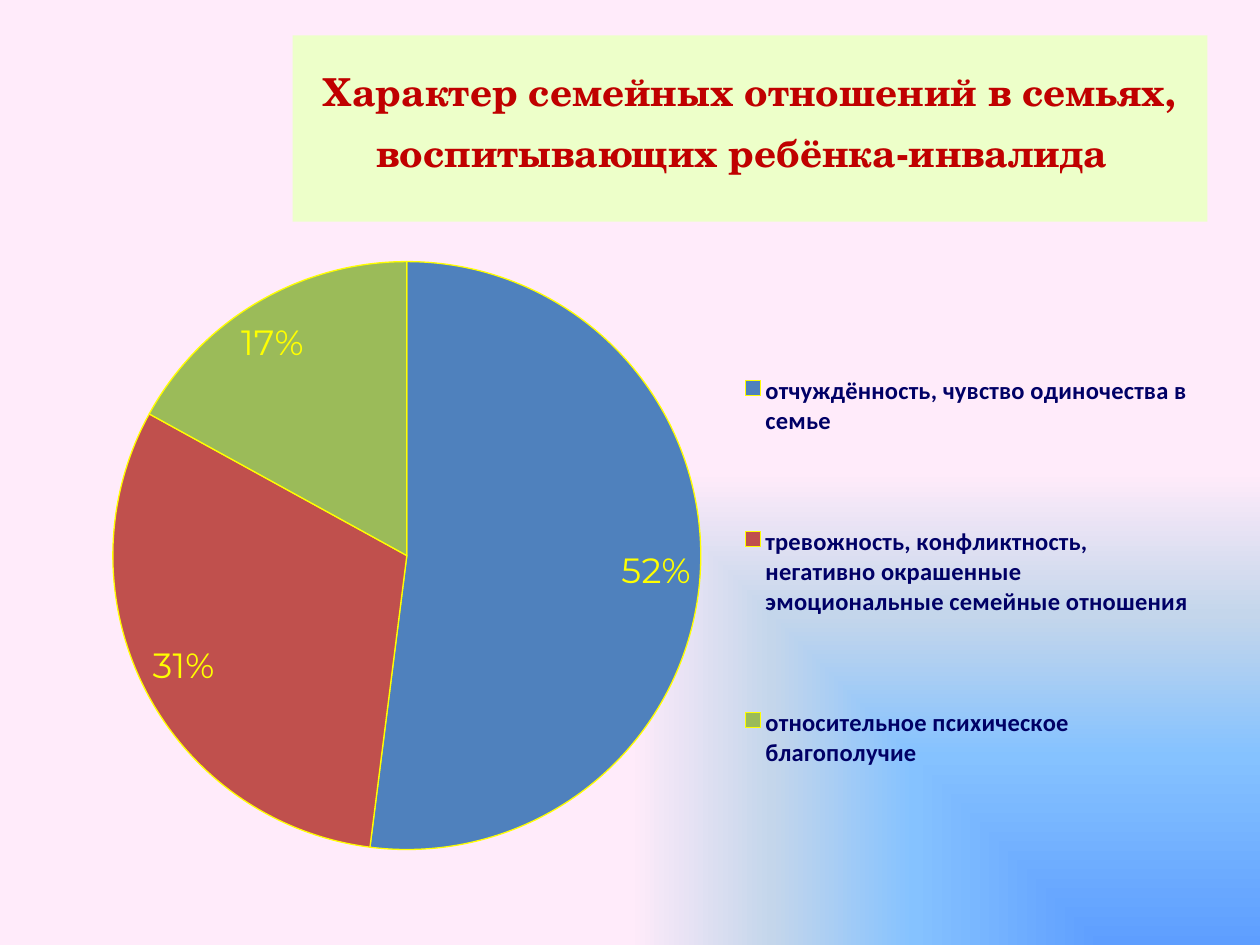
from lxml import etree
from pptx import Presentation
from pptx.chart.data import CategoryChartData
from pptx.dml.color import RGBColor
from pptx.enum import chart as ch, text
from pptx.oxml import parse_xml
from pptx.oxml.ns import nsdecls, qn
from pptx.util import Pt

HUES = {"panel": "EDFFC9", "title": "C00000", "black": "000000",
        "legend": "000066", "line": "FFFF00"}
GLOW = {0: "5E9EFF", 40: "85C2FF", 70: "C4D6EB", 100: "FFEBFA"}
PARTS = [
    ("отчуждённость, чувство одиночества в семье", 0.52, "4F81BD"),
    ("тревожность, конфликтность, негативно окрашенные "
     "эмоциональные семейные отношения", 0.31, "C0504D"),
    ("относительное психическое благополучие", 0.17, "9BBB59"),
]


def style(font, name, size, hue, bold=False):
    font.name, font.size, font.bold = name, Pt(size), bold
    font.color.rgb = RGBColor.from_string(hue)


def paint(fill, hue):
    fill.solid()
    fill.fore_color.rgb = RGBColor.from_string(hue)


def place(shape, box):
    shape.left, shape.top, shape.width, shape.height = map(Pt, box)


def glow(slide):
    """Fill the background with a gradient from the lower right corner."""
    fill = slide.background.fill
    fill.solid()
    stops = "".join(
        f'<a:gs pos="{pos * 1000}"><a:srgbClr val="{hue}"/></a:gs>'
        for pos, hue in GLOW.items())
    grad = parse_xml(
        f'<a:gradFill {nsdecls("a")} rotWithShape="1"><a:gsLst>{stops}</a:gsLst>'
        '<a:path path="rect"><a:fillToRect l="100000" t="100000"/></a:path>'
        '<a:tileRect r="-100000" b="-100000"/></a:gradFill>')
    solid = slide.background._cSld.find(".//" + qn("a:solidFill"))
    solid.getparent().replace(solid, grad)


def heading(slide, box):
    title = slide.shapes.title
    place(title, box)
    paint(title.fill, HUES["panel"])
    frame = title.text_frame
    frame.word_wrap = True
    frame.auto_size = text.MSO_AUTO_SIZE.NONE
    frame.vertical_anchor = text.MSO_ANCHOR.MIDDLE
    para = frame.paragraphs[0]
    para.alignment = text.PP_ALIGN.CENTER
    para.line_spacing = 0.8
    para.text = "Характер семейных отношений в семьях, воспитывающих ребёнка-инвалида"
    style(para.runs[0].font, "TeX Gyre Schola", 22, HUES["title"], True)
    tail = para.add_run()
    tail.text = " "
    style(tail.font, "Calibri", 40, HUES["black"])


def layout(part, spot, box, after=None, inner=False):
    """Pin a chart part to a spot, in points from the corner of the chart box."""
    for old in part.findall(qn("c:layout")):
        part.remove(old)
    node = etree.Element(qn("c:layout"))
    pin = etree.SubElement(node, qn("c:manualLayout"))
    if inner:
        etree.SubElement(pin, qn("c:layoutTarget"), val="inner")
    for key in "xy":
        etree.SubElement(pin, qn(f"c:{key}Mode"), val="edge")
    for key, val, full in zip("xywh", spot, box[2:] * 2):
        etree.SubElement(pin, qn(f"c:{key}"), val=str(val / full))
    if after:
        part.find(qn(after)).addnext(node)
    else:
        part.insert(0, node)


def pie(slide, box):
    names, vals, hues = zip(*PARTS)
    data = CategoryChartData(number_format="0%")
    data.categories = names
    data.add_series("Series 1", vals)
    chart = slide.shapes.add_chart(
        ch.XL_CHART_TYPE.PIE, *map(Pt, box), data).chart
    chart.has_title = False
    style(chart.font, "Calibri", 10, HUES["black"])

    plot = chart.plots[0]
    plot.vary_by_categories = True
    for idx, hue in enumerate(hues):
        form = plot.series[0].points[idx].format
        paint(form.fill, hue)
        form.line.width = Pt(0.75)
        form.line.color.rgb = RGBColor.from_string(HUES["line"])

    plot.has_data_labels = True
    labels = plot.data_labels
    labels.show_value = True
    labels.show_percentage = False
    labels.number_format = "0%"
    labels.number_format_is_linked = False
    labels.position = ch.XL_LABEL_POSITION.BEST_FIT
    style(labels.font, "Montserrat", 20, HUES["line"])

    chart.has_legend = True
    legend = chart.legend
    legend.position = ch.XL_LEGEND_POSITION.RIGHT
    legend.include_in_layout = False
    style(legend.font, "Calibri", 14, HUES["legend"], True)

    area = plot._element.getparent()
    layout(area, (22, 10, 336, 336), box, inner=True)
    layout(legend._element, (380.5, 23.5, 259, 328), box, "c:legendPos")


def main():
    deck = Presentation()
    deck.slide_width, deck.slide_height = Pt(720), Pt(540)
    slide = deck.slides.add_slide(deck.slide_layouts[5])
    glow(slide)
    heading(slide, (167.25, 20.25, 522.75, 106.5))
    pie(slide, (42.5, 139.5, 648, 356.5))
    deck.save("out.pptx")


if __name__ == "__main__":
    main()
